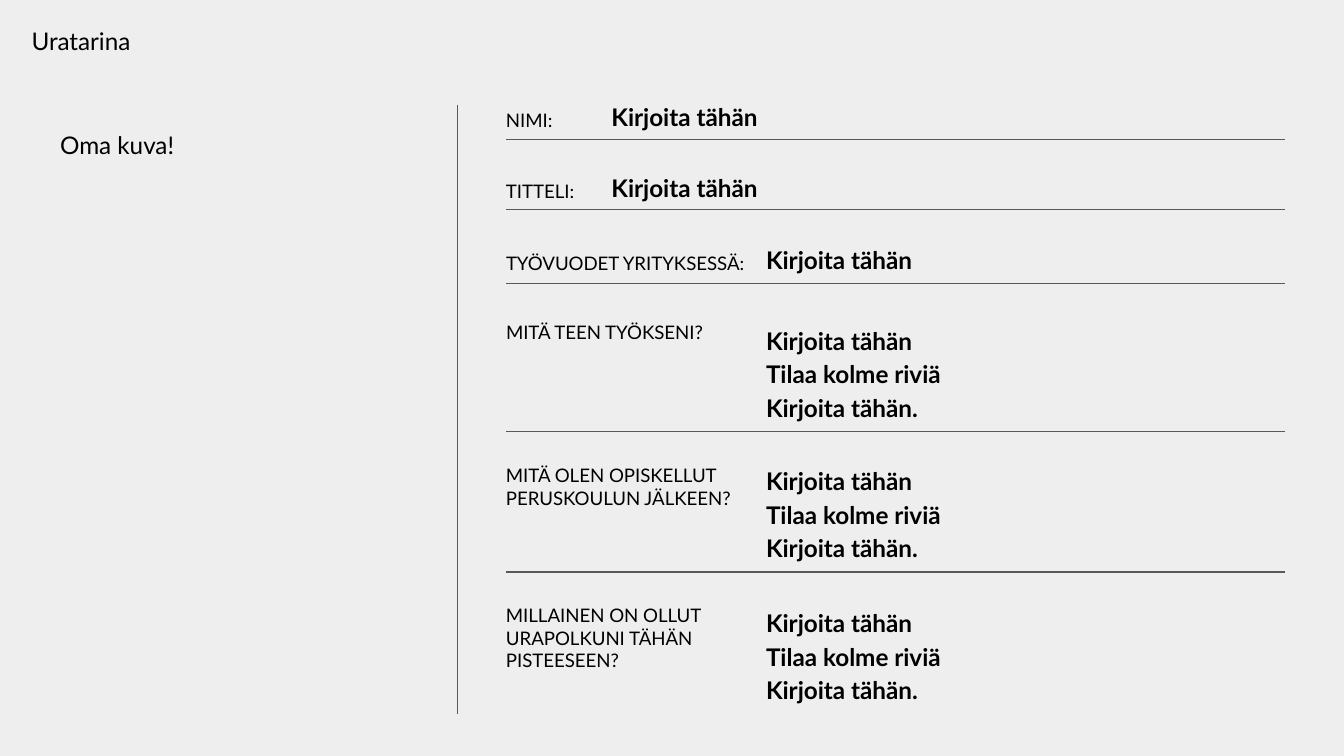
from dataclasses import dataclass
from typing import NamedTuple, Optional

from pptx import Presentation
from pptx.dml.color import RGBColor
from pptx.enum.shapes import MSO_CONNECTOR
from pptx.enum.text import MSO_ANCHOR, MSO_AUTO_SIZE, PP_ALIGN
from pptx.oxml.ns import qn
from pptx.util import Emu, Pt

PX = 4572  # EMU per px, at 200 px to the inch
SLIDE_WIDTH, SLIDE_HEIGHT = 2000, 1125


@dataclass(frozen=True)
class Theme:
    font: str = "Lato"
    background: RGBColor = RGBColor(0xEE, 0xEE, 0xEE)
    text: RGBColor = RGBColor(0, 0, 0)
    rule: RGBColor = RGBColor(0x59, 0x59, 0x59)
    rule_width: float = 0.75
    label_size: int = 10
    body_size: int = 13


class Box(NamedTuple):
    left: int
    top: int
    width: int
    height: int


class Field(NamedTuple):
    label: str
    label_box: Box
    answer: list[str]
    answer_box: Box
    rule_y: Optional[int]


THEME = Theme()
FORM_LEFT, FORM_RIGHT = 753, 1912
NEAR_ANSWER, FAR_ANSWER = 910, 1140
ONE_LINE = ["Kirjoita tähän"]
THREE_LINES = ["Kirjoita tähän", "Tilaa kolme riviä", "Kirjoita tähän."]


def short_field(label: str, top: int, width: int, answer_left: int,
                answer_top: int, rule_y: int) -> Field:
    return Field(label, Box(FORM_LEFT, top, width, 34),
                 ONE_LINE, Box(answer_left, answer_top, 714, 44), rule_y)


def long_field(label: str, label_box: Box, answer_top: int,
               rule_y: Optional[int] = None) -> Field:
    answer_box = Box(FAR_ANSWER, answer_top, FORM_RIGHT - FAR_ANSWER, 144)
    return Field(label, label_box, THREE_LINES, answer_box, rule_y)


FIELDS = [
    short_field("NIMI:", 162, 332, NEAR_ANSWER, 152, 208),
    short_field("TITTELI:", 268, 332, NEAR_ANSWER, 258, 312),
    short_field("TYÖVUODET YRITYKSESSÄ:", 375, 478, FAR_ANSWER, 365, 422),
    long_field("MITÄ TEEN TYÖKSENI?", Box(FORM_LEFT, 478, 330, 34), 479, 642),
    long_field("MITÄ OLEN OPISKELLUT PERUSKOULUN JÄLKEEN?",
               Box(FORM_LEFT, 691, 360, 68), 688, 851),
    long_field("MILLAINEN ON OLLUT URAPOLKUNI TÄHÄN PISTEESEEN?",
               Box(FORM_LEFT, 899, 348, 100), 899),
]


def write_text(shape, lines: list[str], *, size: int = THEME.body_size,
               bold: bool = False, inset: int = 0, spacing: float = 1.0,
               fit: MSO_AUTO_SIZE = MSO_AUTO_SIZE.SHAPE_TO_FIT_TEXT) -> None:
    frame = shape.text_frame
    frame.word_wrap = True
    frame.auto_size = fit
    frame.vertical_anchor = MSO_ANCHOR.TOP
    frame.margin_left = frame.margin_right = Emu(inset * PX)
    frame.margin_top = frame.margin_bottom = Emu(inset * PX)
    frame.text = "\n".join(lines)
    for paragraph in frame.paragraphs:
        paragraph.alignment = PP_ALIGN.LEFT
        paragraph.line_spacing = spacing
        font = paragraph.font
        font.name, font.size, font.bold = THEME.font, Pt(size), bold
        font.color.rgb = THEME.text


def add_text(slide, box: Box, lines: list[str], **text_format) -> None:
    shape = slide.shapes.add_textbox(*(Emu(v * PX) for v in box))
    write_text(shape, lines, **text_format)


def add_rule(slide, x1: int, y1: int, x2: int, y2: int) -> None:
    rule = slide.shapes.add_connector(
        MSO_CONNECTOR.STRAIGHT, *(Emu(v * PX) for v in (x1, y1, x2, y2)))
    rule.line.color.rgb = THEME.rule
    rule.line.width = Pt(THEME.rule_width)
    properties = rule._element.spPr
    properties.append(properties.makeelement(qn("a:effectLst"), {}))


def add_field(slide, field: Field) -> None:
    add_text(slide, field.label_box, [field.label], size=THEME.label_size)
    add_text(slide, field.answer_box, field.answer, bold=True,
             spacing=1.15 if len(field.answer) > 1 else 1.0)
    if field.rule_y is not None:
        add_rule(slide, FORM_LEFT, field.rule_y, FORM_RIGHT, field.rule_y)


def main() -> None:
    presentation = Presentation()
    presentation.slide_width = Emu(SLIDE_WIDTH * PX)
    presentation.slide_height = Emu(SLIDE_HEIGHT * PX)
    slide = presentation.slides.add_slide(presentation.slide_layouts[5])
    slide.background.fill.solid()
    slide.background.fill.fore_color.rgb = THEME.background

    # Title
    title = slide.shapes.title
    title.left, title.top, title.width, title.height = (
        Emu(v * PX) for v in Box(27, 19, 1222, 66))
    write_text(title, ["Uratarina"], inset=20, fit=MSO_AUTO_SIZE.NONE)

    # Portrait area and divider
    add_text(slide, Box(70, 174, 612, 86), ["Oma kuva!"], inset=20,
             fit=MSO_AUTO_SIZE.NONE)
    add_rule(slide, 681, 156, 681, 1062)

    # Form
    for field in FIELDS:
        add_field(slide, field)

    presentation.save("out.pptx")


if __name__ == "__main__":
    main()
